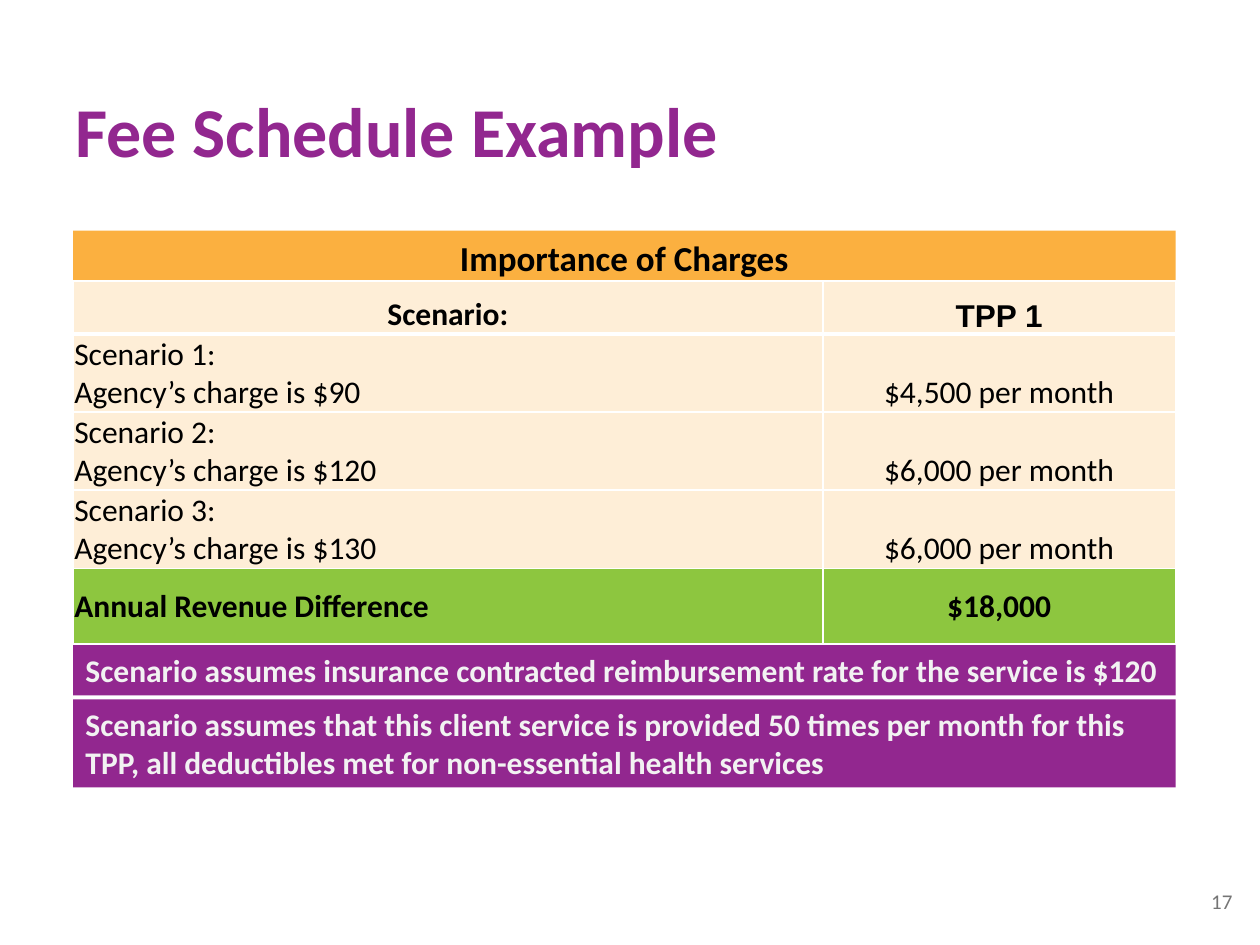
from lxml import etree
from pptx import Presentation
from pptx.dml.color import RGBColor
from pptx.enum.shapes import MSO_SHAPE
from pptx.enum.text import MSO_ANCHOR, PP_ALIGN
from pptx.oxml.ns import qn
from pptx.util import Pt

LEFT, CENTER, RIGHT = PP_ALIGN.LEFT, PP_ALIGN.CENTER, PP_ALIGN.RIGHT
TOP, MIDDLE, BOTTOM = MSO_ANCHOR.TOP, MSO_ANCHOR.MIDDLE, MSO_ANCHOR.BOTTOM
RECTANGLE = MSO_SHAPE.RECTANGLE

COLORS = {
    "purple": "92278F",
    "orange": "FBB040",
    "cream": "FEEED7",
    "green": "8DC63F",
    "white": "FFFFFF",
    "black": "000000",
    "pale": "F2F2F2",
    "gray": "757575",
}
MARGIN, CONTENT_WIDTH = 41.76, 630


def write_text(frame, lines, size, color, bold=False, align=LEFT, anchor=TOP, font="Calibri"):
    frame.word_wrap = True
    frame.vertical_anchor = anchor
    for index, line in enumerate(lines):
        paragraph = frame.add_paragraph() if index else frame.paragraphs[0]
        paragraph.alignment = align
        run = paragraph.add_run()
        run.text = line
        run.font.name = font
        run.font.size = Pt(size)
        run.font.bold = bold
        run.font.color.rgb = RGBColor.from_string(COLORS[color])


def set_borders(cell, widths):
    properties = cell._tc.get_or_add_tcPr()
    for index, (side, width) in enumerate(widths.items()):
        line = etree.Element(qn(f"a:{side}"), w=str(Pt(width)))
        fill = etree.SubElement(line, qn("a:solidFill"))
        etree.SubElement(fill, qn("a:srgbClr"), val=COLORS["white"])
        properties.insert(index, line)


presentation = Presentation()
presentation.slide_width, presentation.slide_height = Pt(720), Pt(540)
slide = presentation.slides.add_slide(presentation.slide_layouts[5])

# Title
title = slide.shapes.title
title.left, title.top, title.width, title.height = Pt(36), Pt(21.6), Pt(509.76), Pt(104.4)
write_text(title.text_frame, ["Fee Schedule Example"], 40, "purple", True, anchor=MIDDLE)

# Heading bar above the table and assumption bars below it
bars = [
    (131.76, 28.8, "orange", "Importance of Charges", 20, "black", CENTER),
    (368.64, 28.8, "purple",
     "Scenario assumes insurance contracted reimbursement rate for the service is $120",
     18, "pale", LEFT),
    (399.6, 50.4, "purple",
     "Scenario assumes that this client service is provided 50 times per month for this TPP, "
     "all deductibles met for non-essential health services", 18, "pale", LEFT),
]
for top, height, fill, text, size, color, align in bars:
    bar = slide.shapes.add_shape(RECTANGLE, Pt(MARGIN), Pt(top), Pt(CONTENT_WIDTH), Pt(height))
    bar.shadow.inherit = False
    bar.fill.solid()
    bar.fill.fore_color.rgb = RGBColor.from_string(COLORS[fill])
    bar.line.fill.background()
    write_text(bar.text_frame, [text], size, color, True, align)

# Charges table: label lines, value, row height, fill
rows = [
    (["Scenario:"], "TPP 1", 30.24, "cream"),
    (["Scenario 1:", "Agency’s charge is $90"], "$4,500 per month", 44.64, "cream"),
    (["Scenario 2:", "Agency’s charge is $120"], "$6,000 per month", 44.64, "cream"),
    (["Scenario 3:", "Agency’s charge is $130"], "$6,000 per month", 44.64, "cream"),
    (["Annual Revenue Difference"], "$18,000", 43.2, "green"),
]
table = slide.shapes.add_table(
    len(rows), 2, Pt(MARGIN), Pt(160.56), Pt(CONTENT_WIDTH), Pt(sum(row[2] for row in rows))
).table
table.columns[0].width, table.columns[1].width = Pt(428.4), Pt(201.6)
for row_index, (label, value, height, fill) in enumerate(rows):
    table.rows[row_index].height = Pt(height)
    is_header, is_total = row_index == 0, row_index == len(rows) - 1
    for column_index, lines in enumerate((label, [value])):
        cell = table.cell(row_index, column_index)
        cell.margin_left = cell.margin_right = cell.margin_top = Pt(0.72)
        cell.margin_bottom = Pt(0)
        cell.vertical_anchor = MIDDLE if is_total else BOTTOM
        cell.fill.solid()
        cell.fill.fore_color.rgb = RGBColor.from_string(COLORS[fill])
        set_borders(cell, {"lnL": 1, "lnR": 1, "lnT": 3 if row_index == 1 else 1,
                           "lnB": 3 if is_header else 1})
        write_text(cell.text_frame, lines, 18, "black", is_header or is_total,
                   CENTER if is_header or column_index else LEFT, cell.vertical_anchor,
                   "Arial" if is_header and column_index else "Calibri")

# Slide number
number = slide.shapes.add_textbox(Pt(543.6), Pt(500.4), Pt(167.76), Pt(28.8))
write_text(number.text_frame, ["17"], 12, "gray", align=RIGHT, anchor=MIDDLE)

presentation.save("out.pptx")
